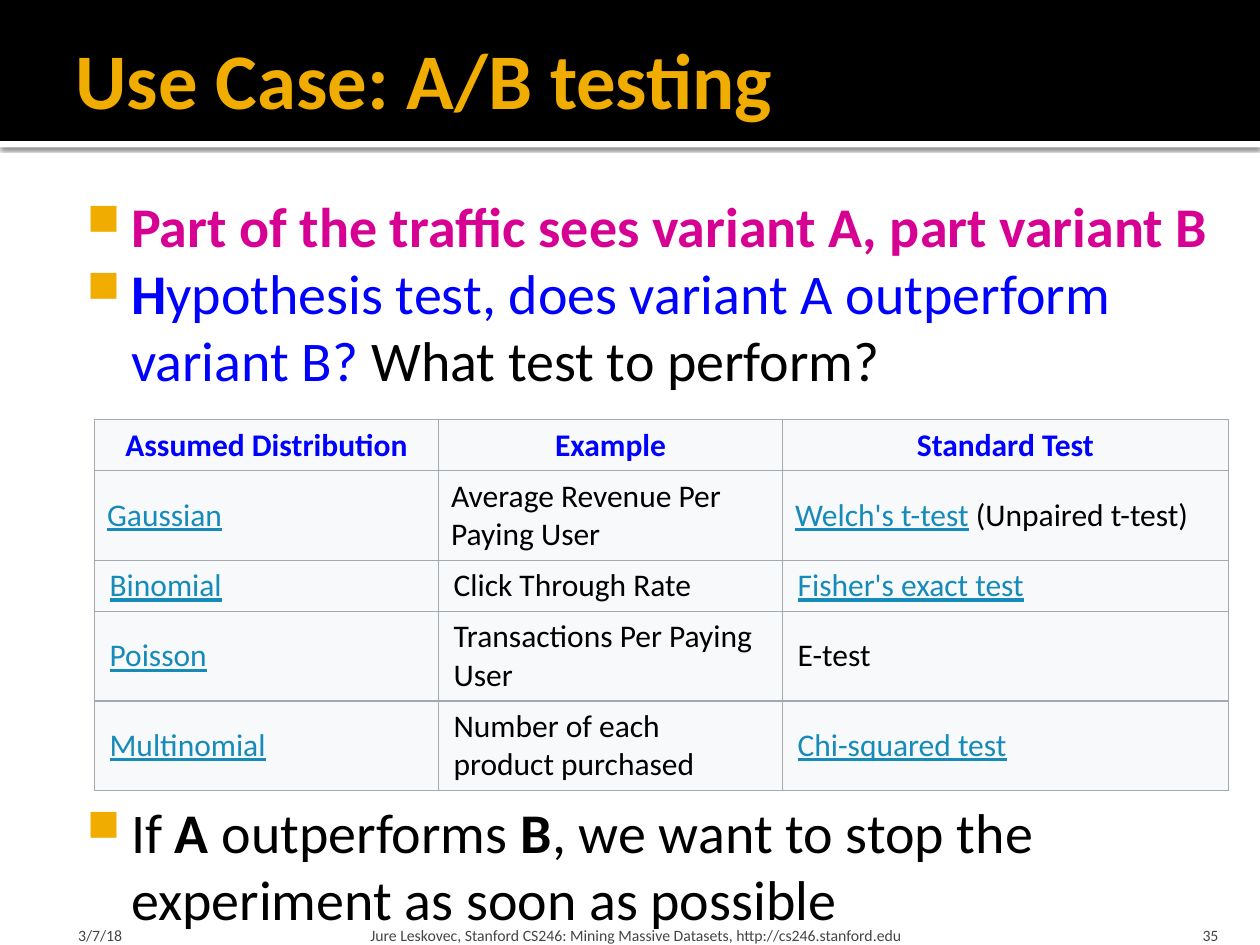
from lxml.etree import SubElement
from pptx import Presentation
from pptx.dml.color import RGBColor
from pptx.enum.shapes import MSO_SHAPE
from pptx.enum.text import MSO_ANCHOR as Anchor, MSO_AUTO_SIZE as AutoSize, PP_ALIGN as Align
from pptx.oxml import parse_xml
from pptx.oxml.ns import qn
from pptx.util import Pt

BLACK, WHITE, GOLD, GRAY = "000000", "FFFFFF", "F0AD00", "454545"
BLUE, MAGENTA, LINK = "0000FF", "D60093", "168BBA"
CELL_FILL, CELL_BORDER = "F8F9FA", "A2A9B1"
NAMESPACE = 'xmlns:a="http://schemas.openxmlformats.org/drawingml/2006/main"'

# Content
TITLE = "Use Case: A/B testing"
PLAIN, STRONG = dict(color=BLACK), dict(color=BLACK, bold=True)
LINKED = dict(color=LINK, underline=True)
HEADER = dict(color=BLUE, bold=True)
TABLE_GAP = 231  # space left for the table between the bullets
BULLETS = [  # (space before, runs)
    (0, [("Part of the traffic sees variant A, part variant B", dict(color=MAGENTA, bold=True))]),
    (0, [("H", HEADER), ("ypothesis test, does variant A outperform variant B?", dict(color=BLUE)),
         (" What test to perform?", PLAIN)]),
    (TABLE_GAP, [("If ", PLAIN), ("A", STRONG), (" outperforms ", PLAIN), ("B", STRONG),
                 (", we want to stop the experiment as soon as possible", PLAIN)]),
]
HEADINGS = ["Assumed Distribution", "Example", "Standard Test"]
TESTS = [  # (distribution, example, runs of the test)
    ("Gaussian", "Average Revenue Per Paying User",
     [("Welch's t-test", LINKED), (" (Unpaired t-test)", PLAIN)]),
    ("Binomial", "Click Through Rate", [("Fisher's exact test", LINKED)]),
    ("Poisson", "Transactions Per Paying User", [("E-test", PLAIN)]),
    ("Multinomial", "Number of each product purchased", [("Chi-squared test", LINKED)]),
]
COLUMN_WIDTHS = [196.6, 196.6, 254.8]
ROW_HEIGHTS = [29.2, 51.1, 29.2, 51.1, 51.1]
FOOTERS = [  # (text, left, width, left inset, right inset, alignment)
    ("3/7/18", 36, 168, 8.64, 3.6, Align.LEFT),
    ("Jure Leskovec, Stanford CS246: Mining Massive Datasets, http://cs246.stanford.edu",
     208, 433.4, 3.6, 3.6, Align.LEFT),
    ("35", 645.8, 57.6, 7.2, 7.2, Align.RIGHT),
]


def rgb(value):
    return RGBColor.from_string(value)


def add_text(paragraph, text, size=18, color=BLACK, bold=False, underline=False):
    run = paragraph.add_run()
    run.text = text
    font = run.font
    font.name, font.size, font.bold, font.underline = "Calibri", Pt(size), bold, underline
    font.color.rgb = rgb(color)


def set_frame(frame, insets, anchor):
    frame.word_wrap, frame.auto_size = True, AutoSize.NONE
    frame.vertical_anchor = anchor
    (frame.margin_left, frame.margin_top,
     frame.margin_right, frame.margin_bottom) = map(Pt, insets)


def add_box(slide, box, insets, anchor):
    frame = slide.shapes.add_textbox(*map(Pt, box)).text_frame
    set_frame(frame, insets, anchor)
    return frame


def add_band(slide, top, height, color):
    band = slide.shapes.add_shape(MSO_SHAPE.RECTANGLE, 0, Pt(top), Pt(720), Pt(height))
    band.shadow.inherit = False
    band.fill.solid()
    band.fill.fore_color.rgb = rgb(color)
    band.line.fill.background()
    return band


def add_shadow(shape):
    effects = shape.element.spPr.find(qn("a:effectLst"))
    effects.append(parse_xml(
        f'<a:outerShdw {NAMESPACE} blurRad="{Pt(2.5)}" dist="{Pt(0.8)}" dir="5400000">'
        f'<a:srgbClr val="{BLACK}"><a:alpha val="60000"/></a:srgbClr></a:outerShdw>'))


def set_bullet(paragraph):
    properties = paragraph._p.get_or_add_pPr()
    properties.set("marL", str(Pt(34.56)))
    properties.set("indent", str(Pt(-25.2)))
    color = SubElement(properties, qn("a:buClr"))
    SubElement(color, qn("a:srgbClr"), val=GOLD)
    SubElement(properties, qn("a:buSzPct"), val="80000")
    SubElement(properties, qn("a:buChar"), char="■")


def set_borders(cell):
    properties = cell._tc.get_or_add_tcPr()
    for side in "LRTB":
        properties.append(parse_xml(
            f'<a:ln{side} {NAMESPACE} w="{Pt(0.75)}"><a:solidFill>'
            f'<a:srgbClr val="{CELL_BORDER}"/></a:solidFill></a:ln{side}>'))


def add_table(slide):
    rows = [[[(heading, HEADER)] for heading in HEADINGS]]
    rows += [[[(name, LINKED)], [(example, PLAIN)], test] for name, example, test in TESTS]
    table = slide.shapes.add_table(
        len(rows), len(HEADINGS), Pt(54), Pt(239.8),
        Pt(sum(COLUMN_WIDTHS)), Pt(sum(ROW_HEIGHTS))).table
    for column, width in zip(table.columns, COLUMN_WIDTHS):
        column.width = Pt(width)
    for index, (row, height) in enumerate(zip(rows, ROW_HEIGHTS)):
        table.rows[index].height = Pt(height)
        side_inset = Pt(7.2 if index == 1 else 8.64)
        for cell, runs in zip(table.rows[index].cells, row):
            set_borders(cell)
            cell.fill.solid()
            cell.fill.fore_color.rgb = rgb(CELL_FILL)
            cell.vertical_anchor = Anchor.MIDDLE
            cell.margin_left = cell.margin_right = side_inset
            cell.margin_top = cell.margin_bottom = Pt(3.6)
            paragraph = cell.text_frame.paragraphs[0]
            paragraph.alignment = Align.LEFT if index else Align.CENTER
            for text, style in runs:
                add_text(paragraph, text, **style)


def main():
    presentation = Presentation()
    presentation.slide_width, presentation.slide_height = Pt(720), Pt(540)
    slide = presentation.slides.add_slide(presentation.slide_layouts[5])

    # Header band, with the title in front of it
    add_shadow(add_band(slide, 80.6, 3.6, WHITE))
    add_band(slide, 0, 80.6, BLACK)
    title = slide.shapes.title
    title.left, title.top, title.width, title.height = map(Pt, (36, 5.8, 648, 77.8))
    slide.shapes.element.append(title.element)
    set_frame(title.text_frame, (7.2, 3.6, 3.6, 3.6), Anchor.MIDDLE)
    title.text_frame.paragraphs[0].alignment = Align.LEFT
    add_text(title.text_frame.paragraphs[0], TITLE, size=45, color=GOLD, bold=True)

    # Footer
    for text, left, width, left_inset, right_inset, alignment in FOOTERS:
        frame = add_box(slide, (left, 518.4, width, 21.6),
                        (left_inset, 3.6, right_inset, 0), Anchor.BOTTOM)
        frame.paragraphs[0].alignment = alignment
        add_text(frame.paragraphs[0], text, size=9, color=GRAY)

    # Bullets above and below the table
    frame = add_box(slide, (36, 102.2, 678.2, 437.8), (4.3, 7.2, 7.2, 3.6), Anchor.TOP)
    for index, (space, runs) in enumerate(BULLETS):
        paragraph = frame.add_paragraph() if index else frame.paragraphs[0]
        set_bullet(paragraph)
        paragraph.space_before = Pt(space)
        for text, style in runs:
            add_text(paragraph, text, size=32, **style)

    add_table(slide)
    presentation.save("out.pptx")


if __name__ == "__main__":
    main()
